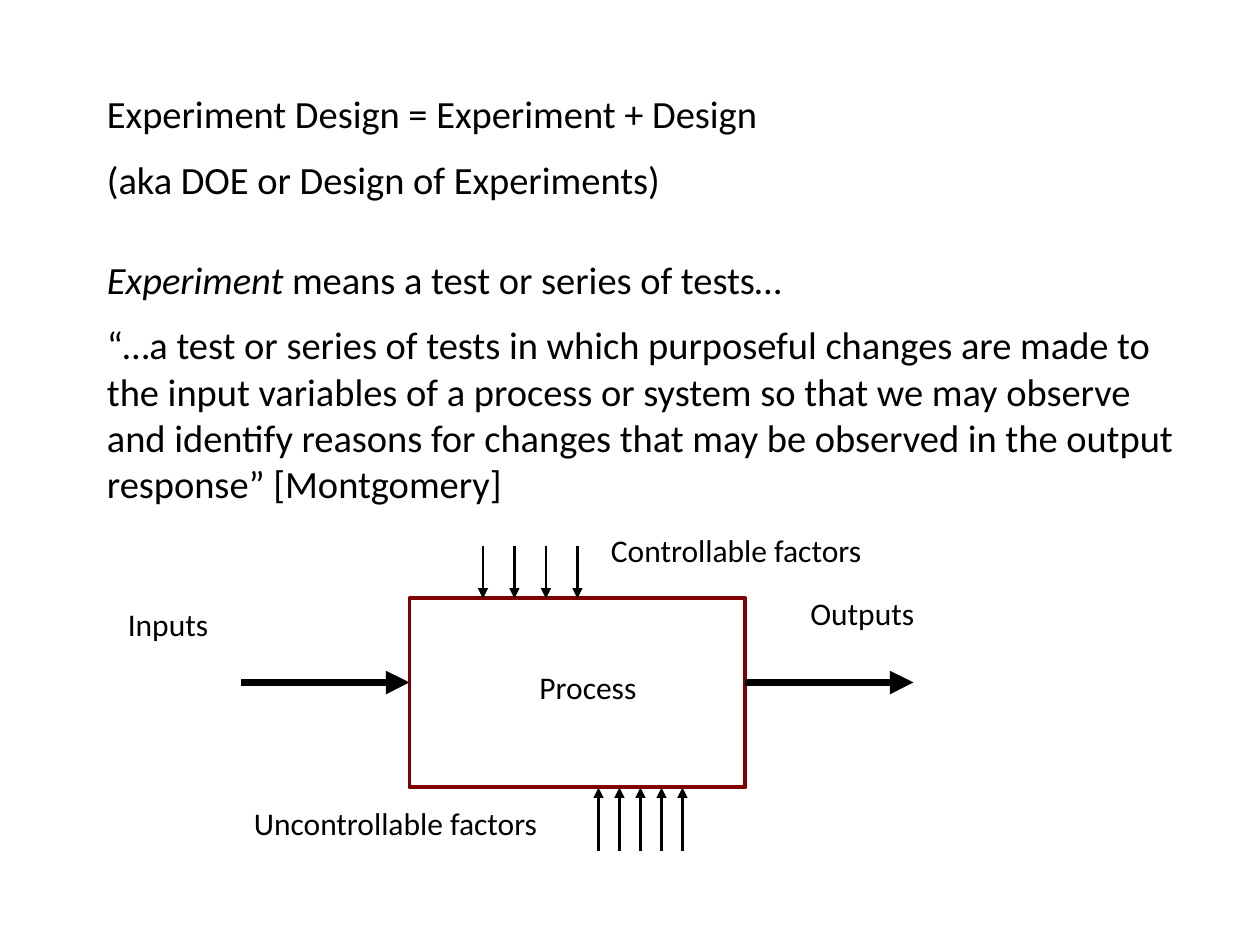
from lxml import etree
from pptx import Presentation
from pptx.dml.color import RGBColor
from pptx.enum.shapes import MSO_CONNECTOR, MSO_SHAPE
from pptx.enum.text import MSO_AUTO_SIZE, PP_ALIGN
from pptx.oxml.ns import qn
from pptx.util import Pt

STRAIGHT = MSO_CONNECTOR.STRAIGHT
RECTANGLE = MSO_SHAPE.RECTANGLE
LEFT, CENTER = PP_ALIGN.LEFT, PP_ALIGN.CENTER
FIT_SHAPE = MSO_AUTO_SIZE.SHAPE_TO_FIT_TEXT
BLANK_LAYOUT = 6

COLORS = {"ink": "000000", "frame": "800000"}
FONT = "Calibri"


def set_all(target, values):
    for name, value in values.items():
        setattr(target, name, value)


class SlideBuilder:
    """Holds the style and the current page; lengths are in points."""

    def __init__(self, page):
        self.page = page

    def color(self, name):
        return RGBColor.from_string(COLORS[name])

    def text(self, left, top, width, height, paragraphs, size, align=LEFT):
        """Each paragraph is (space before, [(wording, italic), ...])."""
        box = self.page.shapes.add_textbox(Pt(left), Pt(top), Pt(width), Pt(height))
        frame = box.text_frame
        set_all(frame, {"word_wrap": True, "auto_size": FIT_SHAPE})
        for index, (space, spans) in enumerate(paragraphs):
            para = frame.add_paragraph() if index else frame.paragraphs[0]
            set_all(para, {"alignment": align, "space_before": Pt(space)})
            for wording, italic in spans:
                span = para.add_run()
                span.text = wording
                set_all(span.font, {"name": FONT, "size": Pt(size), "italic": italic})
                span.font.color.rgb = self.color("ink")

    def label(self, left, top, width, wording, align=LEFT):
        self.text(left, top, width, 29, [(0, [(wording, False)])], 18, align)

    def frame(self, left, top, width, height):
        box = self.page.shapes.add_shape(
            RECTANGLE, Pt(left), Pt(top), Pt(width), Pt(height))
        box.shadow.inherit = False
        box.fill.background()
        box.line.color.rgb = self.color("frame")
        box.line.width = Pt(2.25)

    def arrow(self, x1, y1, x2, y2, weight):
        arrow = self.page.shapes.add_connector(
            STRAIGHT, Pt(x1), Pt(y1), Pt(x2), Pt(y2))
        arrow.line.color.rgb = self.color("ink")
        arrow.line.width = Pt(weight)
        outline = arrow.line._get_or_add_ln()
        etree.SubElement(outline, qn("a:tailEnd"), type="triangle")
        etree.SubElement(arrow._element.spPr, qn("a:effectLst"))


deck = Presentation()
set_all(deck, {"slide_width": Pt(720), "slide_height": Pt(540)})
slide = SlideBuilder(deck.slides.add_slide(deck.slide_layouts[BLANK_LAYOUT]))

# Definition
slide.text(54, 48, 630, 253, [
    (0, [("Experiment Design = Experiment + Design", False)]),
    (11, [("(aka DOE or Design of Experiments)", False)]),
    (31, [("Experiment", True), (" means a test or series of tests…", False)]),
    (11, [("“…a test or series of tests in which purposeful changes are made to "
           "the input variables of a process or system so that we may observe "
           "and identify reasons for changes that may be observed in the output "
           "response” [Montgomery]", False)]),
], 22)

# Process box
box_left, box_top, box_width, box_height = 234, 342, 192, 108
box_right, box_bottom = box_left + box_width, box_top + box_height
slide.frame(box_left, box_top, box_width, box_height)
slide.label(264, 378, 144, "Process", CENTER)

# Inputs and outputs
flow_y, flow_length = 390, 96
for start in (box_left - flow_length, box_right):
    slide.arrow(start, flow_y, start + flow_length, flow_y, 4.5)
slide.label(66, 342, 144, "Inputs")
slide.label(456, 336, 144, "Outputs")

# Factors acting from above and below: first x, gap, count, start y, end y
for first, gap, count, start, end in (
        (276, 18, 4, box_top - 30, box_top),
        (342, 12, 5, box_bottom + 36, box_bottom)):
    for index in range(count):
        x = first + index * gap
        slide.arrow(x, start, x, end, 1.5)
slide.label(342, 300, 228, "Controllable factors")
slide.label(138, 456, 228, "Uncontrollable factors")

deck.save("out.pptx")
